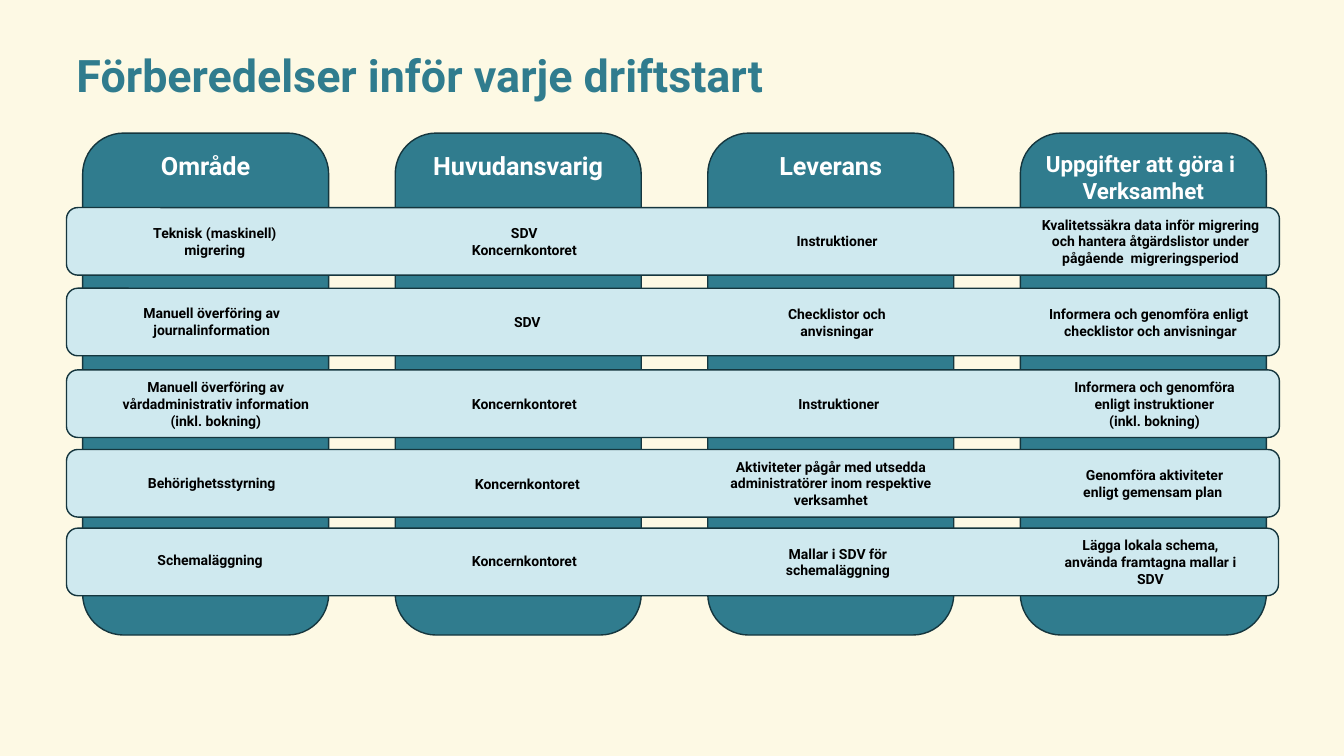
from copy import deepcopy
from dataclasses import dataclass

from pptx import Presentation
from pptx.dml.color import RGBColor
from pptx.enum.shapes import MSO_SHAPE
from pptx.enum.text import MSO_ANCHOR, PP_ALIGN
from pptx.oxml.ns import qn
from pptx.util import Inches, Pt

ROUNDED = MSO_SHAPE.ROUNDED_RECTANGLE
TOP, MIDDLE = MSO_ANCHOR.TOP, MSO_ANCHOR.MIDDLE
LEFT, CENTER = PP_ALIGN.LEFT, PP_ALIGN.CENTER


@dataclass(frozen=True)
class Theme:
    font: str = "Roboto"
    background: str = "FDF9E4"
    teal: str = "307C8E"
    pale: str = "CFE9EF"
    outline: str = "15363E"
    white: str = "FFFFFF"
    black: str = "000000"
    title_size: int = 32
    header_size: int = 18
    long_header_size: int = 16
    cell_size: int = 10


THEME = Theme()

TITLE = "Förberedelser inför varje driftstart"
HEADERS = [
    ("Område", THEME.header_size),
    ("Huvudansvarig", THEME.header_size),
    ("Leverans", THEME.header_size),
    ("Uppgifter att göra i  Verksamhet", THEME.long_header_size),
]
# Each row: top, width, then one cell per column as
# (text, width, height, shift from column centre, shift from row centre).
ROWS = [
    (2.06, 12.03, [
        ("Teknisk (maskinell) migrering", 1.98, 0.36, 0.09, 0),
        ("SDV\nKoncernkontoret", 1.52, 0.36, 0.06, 0),
        ("Instruktioner ", 1.52, 0.36, 0.08, 0),
        ("Kvalitetssäkra data inför migrering och hantera åtgärdslistor under "
         "pågående  migreringsperiod", 2.64, 0.68, 0.07, 0)]),
    (2.86, 12.03, [
        ("Manuell överföring av journalinformation", 1.74, 0.37, 0.06, -0.01),
        ("SDV", 1.52, 0.36, 0.09, 0),
        ("Checklistor och anvisningar", 1.52, 0.36, 0.06, 0),
        ("Informera och genomföra enligt  checklistor och anvisningar",
         2.37, 0.36, 0.07, 0)]),
    (3.67, 12.03, [
        ("Manuell överföring av vårdadministrativ information (inkl. bokning)",
         2.25, 0.38, 0.1, 0),
        ("Koncernkontoret", 1.52, 0.36, 0.06, 0),
        ("Instruktioner", 1.52, 0.36, 0.08, 0),
        ("Informera och genomföra enligt instruktioner\v(inkl. bokning)",
         1.98, 0.51, 0.11, 0)]),
    (4.46, 12.03, [
        ("Behörighetsstyrning", 1.67, 0.38, 0.06, 0),
        ("Koncernkontoret", 1.52, 0.36, 0.09, 0.01),
        ("Aktiviteter pågår med utsedda administratörer inom respektive "
         "verksamhet", 2.24, 0.44, 0, 0),
        ("Genomföra aktiviteter enligt gemensam plan ", 1.98, 0.51, 0.11, 0)]),
    (5.24, 12.02, [
        ("Schemaläggning ", 1.79, 0.34, 0.06, -0.02),
        ("Koncernkontoret", 1.52, 0.36, 0.06, -0.01),
        ("Mallar i SDV för schemaläggning", 1.52, 0.36, 0.07, 0),
        ("Lägga lokala schema, använda framtagna mallar i SDV",
         1.99, 0.51, 0.07, 0)]),
]

SLIDE_W, SLIDE_H = 13.33, 7.5
COLUMN_LEFT, COLUMN_TOP, COLUMN_W, COLUMN_H = 0.82, 1.32, 2.44, 4.98
COLUMN_PITCH = 3.1
ROW_LEFT, ROW_H = 0.66, 0.67


def rgb(value):
    return RGBColor.from_string(value)


def add_rounded(slide, x, y, w, h, fill=None, line=None):
    sp = slide.shapes.add_shape(ROUNDED, Inches(x), Inches(y), Inches(w), Inches(h))
    sp.shadow.inherit = False
    if fill:
        sp.fill.solid()
        sp.fill.fore_color.rgb = rgb(fill)
    else:
        sp.fill.background()
    if line:
        sp.line.color.rgb = rgb(line)
        sp.line.width = Pt(1)
    else:
        sp.line.fill.background()
    return sp


def write(sp, text, size, color=THEME.black, align=CENTER, anchor=MIDDLE, spacing=None):
    """Fill a shape with bold text; \\n starts a paragraph, \\v breaks a line."""
    tf = sp.text_frame
    tf.word_wrap = True
    tf.vertical_anchor = anchor
    tf.text = text
    for p in tf.paragraphs:
        p.alignment = align
        if spacing:
            p.line_spacing = spacing
        for r in p.runs:
            r.font.name = THEME.font
            r.font.size = Pt(size)
            r.font.bold = True
            r.font.color.rgb = rgb(color)
        for br in p._p.findall(qn("a:br")):
            br.append(deepcopy(p.runs[0]._r.rPr))


def column_left(i):
    return COLUMN_LEFT + i * COLUMN_PITCH


def main():
    prs = Presentation()
    prs.slide_width, prs.slide_height = Inches(SLIDE_W), Inches(SLIDE_H)
    slide = prs.slides.add_slide(prs.slide_layouts[6])
    slide.background.fill.solid()
    slide.background.fill.fore_color.rgb = rgb(THEME.background)

    title = slide.shapes.add_textbox(Inches(ROW_LEFT), Inches(0.31), Inches(8.42), Inches(0.8))
    write(title, TITLE, THEME.title_size, color=THEME.teal, align=LEFT, spacing=1.1)

    for i, (header, size) in enumerate(HEADERS):
        column = add_rounded(slide, column_left(i), COLUMN_TOP, COLUMN_W, COLUMN_H,
                             fill=THEME.teal, line=THEME.outline)
        write(column, header, size, color=THEME.white, anchor=TOP)

    for top, width, cells in ROWS:
        add_rounded(slide, ROW_LEFT, top, width, ROW_H, fill=THEME.pale, line=THEME.outline)
        for i, (text, w, h, dx, dy) in enumerate(cells):
            x = column_left(i) + (COLUMN_W - w) / 2 + dx
            y = top + (ROW_H - h) / 2 + dy
            fill = THEME.pale if h < ROW_H else None
            write(add_rounded(slide, x, y, w, h, fill=fill), text, THEME.cell_size)

    prs.save("out.pptx")


if __name__ == "__main__":
    main()
